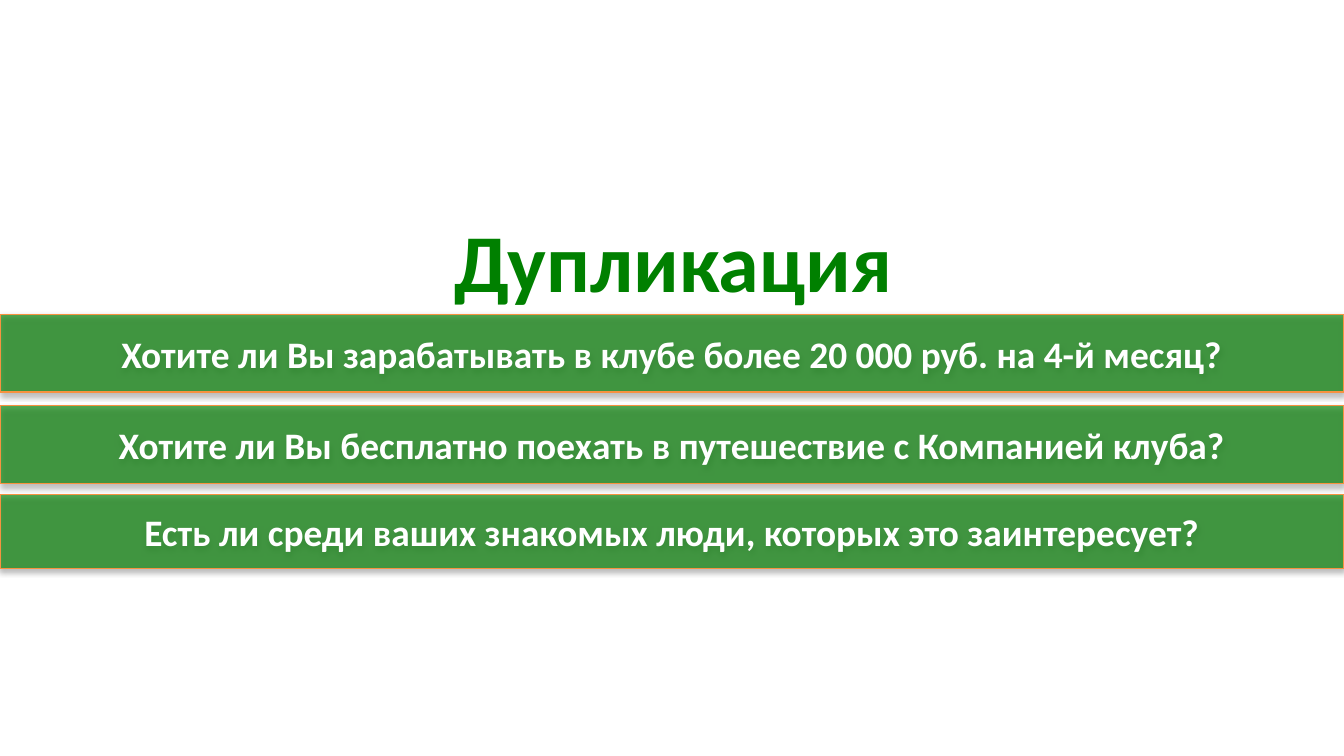
from dataclasses import dataclass

from lxml.etree import SubElement as Sub
from pptx import Presentation
from pptx.dml.color import RGBColor as Rgb
from pptx.enum.shapes import MSO_SHAPE as Shape
from pptx.enum.text import MSO_ANCHOR as Anchor, PP_ALIGN as Align
from pptx.oxml.ns import qn
from pptx.util import Cm, Pt


@dataclass(frozen=True)
class Theme:
    font: str = "Calibri"
    green: str = "008000"
    white: str = "FFFFFF"
    edge: str = "F79240"
    shade: str = "000000"
    head: int = 44
    body: int = 20


THEME = Theme()
WIDE, HIGH = 25.4, 14.29
BARS = [
    ("Хотите ли Вы зарабатывать в клубе более 20 000 руб. на 4-й месяц?", 5.94, 1.47),
    ("Хотите ли Вы бесплатно поехать в путешествие с Компанией клуба?", 7.67, 1.47),
    ("Есть ли среди ваших знакомых люди, которых это заинтересует?", 9.35, 1.4),
]


def write(shape, text, size, color, bold=True, align=Align.CENTER):
    frame = shape.text_frame
    frame.word_wrap = True
    frame.vertical_anchor = Anchor.MIDDLE
    line = frame.paragraphs[0]
    line.alignment = align
    run = line.add_run()
    run.text = text
    font = run.font
    font.name, font.size, font.bold = THEME.font, Pt(size), bold
    font.color.rgb = Rgb.from_string(color)


def fade(color, part):
    Sub(color, qn("a:alpha"), val=str(part * 1000))


def shadow(shape):
    shape.shadow.inherit = False
    group = shape._element.spPr.find(qn("a:effectLst"))
    outer = Sub(group, qn("a:outerShdw"), blurRad=str(Pt(3.1)),
                dist=str(Pt(1.6)), dir="5400000", rotWithShape="0")
    fade(Sub(outer, qn("a:srgbClr"), val=THEME.shade), 38)


def title(slide, text, x, y, w, h):
    shape = slide.shapes.title
    shape.left, shape.top, shape.width, shape.height = map(Cm, (x, y, w, h))
    write(shape, text, size=THEME.head, color=THEME.green)


def bar(slide, text, x, y, w, h):
    shape = slide.shapes.add_shape(Shape.RECTANGLE, *map(Cm, (x, y, w, h)))
    shape.fill.solid()
    shape.fill.fore_color.rgb = Rgb.from_string(THEME.green)
    fade(shape._element.spPr.find(qn("a:solidFill"))[0], 66)
    shape.line.color.rgb = Rgb.from_string(THEME.edge)
    shape.line.width = Pt(0.75)
    shadow(shape)
    write(shape, text, size=THEME.body, color=THEME.white)


def main():
    deck = Presentation()
    deck.slide_width, deck.slide_height = Cm(WIDE), Cm(HIGH)
    slide = deck.slides.add_slide(deck.slide_layouts[5])
    title(slide, "Дупликация", 1.3, 3.71, 22.86, 2.39)
    for text, top, high in BARS:
        bar(slide, text, 0, top, WIDE, high)
    deck.save("out.pptx")


if __name__ == "__main__":
    main()
